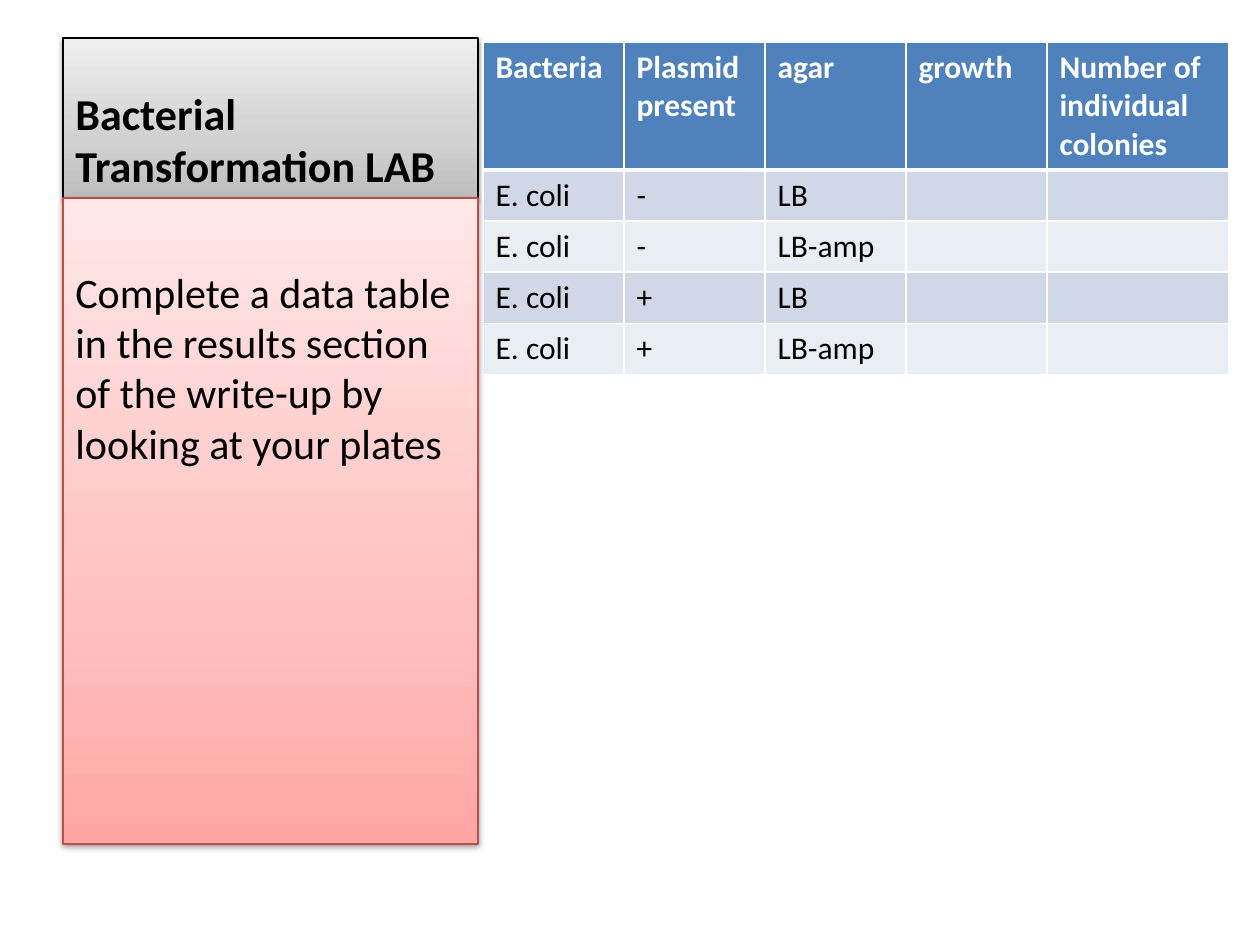
"""Build the bacterial transformation lab slide with its data table."""
from lxml import etree
from pptx import Presentation
from pptx import util as u
from pptx.dml.color import RGBColor
from pptx.enum import shapes, text
from pptx.oxml import parse_xml
from pptx.oxml.ns import nsdecls, qn

BLACK = RGBColor(0x00, 0x00, 0x00)
WHITE = RGBColor(0xFF, 0xFF, 0xFF)
RED = RGBColor(0xBF, 0x4C, 0x48)
BLUE = RGBColor(0x4F, 0x81, 0xBD)
BANDS = [RGBColor(0xD0, 0xD8, 0xE8), RGBColor(0xE9, 0xED, 0xF4)]
GREYS = [RGBColor(0xBD, 0xBD, 0xBD), RGBColor(0xD1, 0xD1, 0xD1), RGBColor(0xEE, 0xEE, 0xEE)]
PINKS = [RGBColor(0xFF, 0xA6, 0xA5), RGBColor(0xFF, 0xC0, 0xBF), RGBColor(0xFF, 0xE7, 0xE7)]
STOPS = [0, 35, 100]

PANELS = [
    {"text": "Bacterial Transformation LAB", "top": 38, "height": 160,
     "fill": GREYS, "line": BLACK, "font": {"size": u.Pt(25.2), "bold": True},
     "frame": {"vertical_anchor": text.MSO_ANCHOR.BOTTOM}, "inset": 6},
    {"text": "Complete a data table in the results section of the write-up "
             "by looking at your plates", "top": 198, "height": 646,
     "fill": PINKS, "line": RED, "font": {"size": u.Pt(24), "bold": False},
     "frame": {"vertical_anchor": text.MSO_ANCHOR.TOP}, "inset": 68},
]
PANEL_LEFT, PANEL_WIDTH = 63, 415

ROWS = [
    ["Bacteria", "Plasmid present", "agar", "growth", "Number of individual colonies"],
    ["E. coli", "-", "LB", "", ""],
    ["E. coli", "-", "LB-amp", "", ""],
    ["E. coli", "+", "LB", "", ""],
    ["E. coli", "+", "LB-amp", "", ""],
]
TABLE_LEFT, TABLE_TOP = 483, 42
COLUMN_WIDTHS = [141] * 4 + [182]
ROW_HEIGHTS = [126] + [51] * 4


def px(length):
    """Turn slide pixels into EMU."""
    return u.Emu(round(length * 914400 / 126))


def assign(target, values):
    """Set each named attribute on the target."""
    for name, value in values.items():
        setattr(target, name, value)


def write(frame, words, color, font):
    """Put one left-aligned run in the frame."""
    para = frame.paragraphs[0]
    para.alignment = text.PP_ALIGN.LEFT
    span = para.add_run()
    span.text = words
    assign(span.font, {"name": "Calibri", **font})
    span.font.color.rgb = color


def shade(box, colors):
    """Fill the box with a vertical gradient and give it a soft shadow."""
    box.fill.gradient()
    box.fill.gradient_angle = 90
    stops = box._element.spPr.find(".//" + qn("a:gsLst"))
    for stop in list(stops):
        stops.remove(stop)
    for position, color in zip(STOPS, colors):
        stop = etree.SubElement(stops, qn("a:gs"), pos=str(position * 1000))
        etree.SubElement(stop, qn("a:srgbClr"), val=str(color))
    box.shadow.inherit = False
    box._element.spPr.find(qn("a:effectLst")).append(parse_xml(
        f'<a:outerShdw {nsdecls("a")} blurRad="40000" dist="20000" dir="5400000" '
        'rotWithShape="0"><a:srgbClr val="000000"><a:alpha val="38000"/>'
        '</a:srgbClr></a:outerShdw>'))


def add_panel(page, panel):
    """Add one shaded text panel."""
    box = page.shapes.add_shape(
        shapes.MSO_SHAPE.RECTANGLE, px(PANEL_LEFT), px(panel["top"]),
        px(PANEL_WIDTH), px(panel["height"]))
    box.line.color.rgb = panel["line"]
    box.line.width = u.Pt(0.75)
    shade(box, panel["fill"])
    assign(box.text_frame, {"word_wrap": True, "margin_top": px(panel["inset"]),
                            **panel["frame"]})
    write(box.text_frame, panel["text"], BLACK, panel["font"])


def add_borders(cell, bottom, top):
    """Draw white borders ahead of the cell's fill."""
    widths = {"lnL": 1, "lnR": 1, "lnT": top, "lnB": bottom}
    for index, (side, width) in enumerate(widths.items()):
        cell._tc.get_or_add_tcPr().insert(index, parse_xml(
            f'<a:{side} {nsdecls("a")} w="{u.Pt(width)}"><a:solidFill>'
            f'<a:srgbClr val="{WHITE}"/></a:solidFill></a:{side}>'))


def add_data_table(page):
    """Add the table of plates and results."""
    table = page.shapes.add_table(
        len(ROWS), len(COLUMN_WIDTHS), px(TABLE_LEFT), px(TABLE_TOP),
        px(sum(COLUMN_WIDTHS)), px(sum(ROW_HEIGHTS))).table
    for column, width in zip(table.columns, COLUMN_WIDTHS):
        column.width = px(width)
    for r, (values, height) in enumerate(zip(ROWS, ROW_HEIGHTS)):
        table.rows[r].height = px(height)
        header = r == 0
        for c, value in enumerate(values):
            cell = table.cell(r, c)
            cell.fill.solid()
            cell.fill.fore_color.rgb = BLUE if header else BANDS[(r - 1) % 2]
            add_borders(cell, bottom=3 if header else 1, top=3 if r == 1 else 1)
            if value:
                write(cell.text_frame, value, WHITE if header else BLACK,
                      {"size": u.Pt(18), "bold": header})


def main():
    """Build and save the deck."""
    deck = Presentation()
    deck.slide_width, deck.slide_height = px(1260), px(945)
    page = deck.slides.add_slide(deck.slide_layouts[6])
    title, instructions = PANELS
    add_panel(page, title)
    add_data_table(page)
    add_panel(page, instructions)
    deck.save("out.pptx")


if __name__ == "__main__":
    main()
